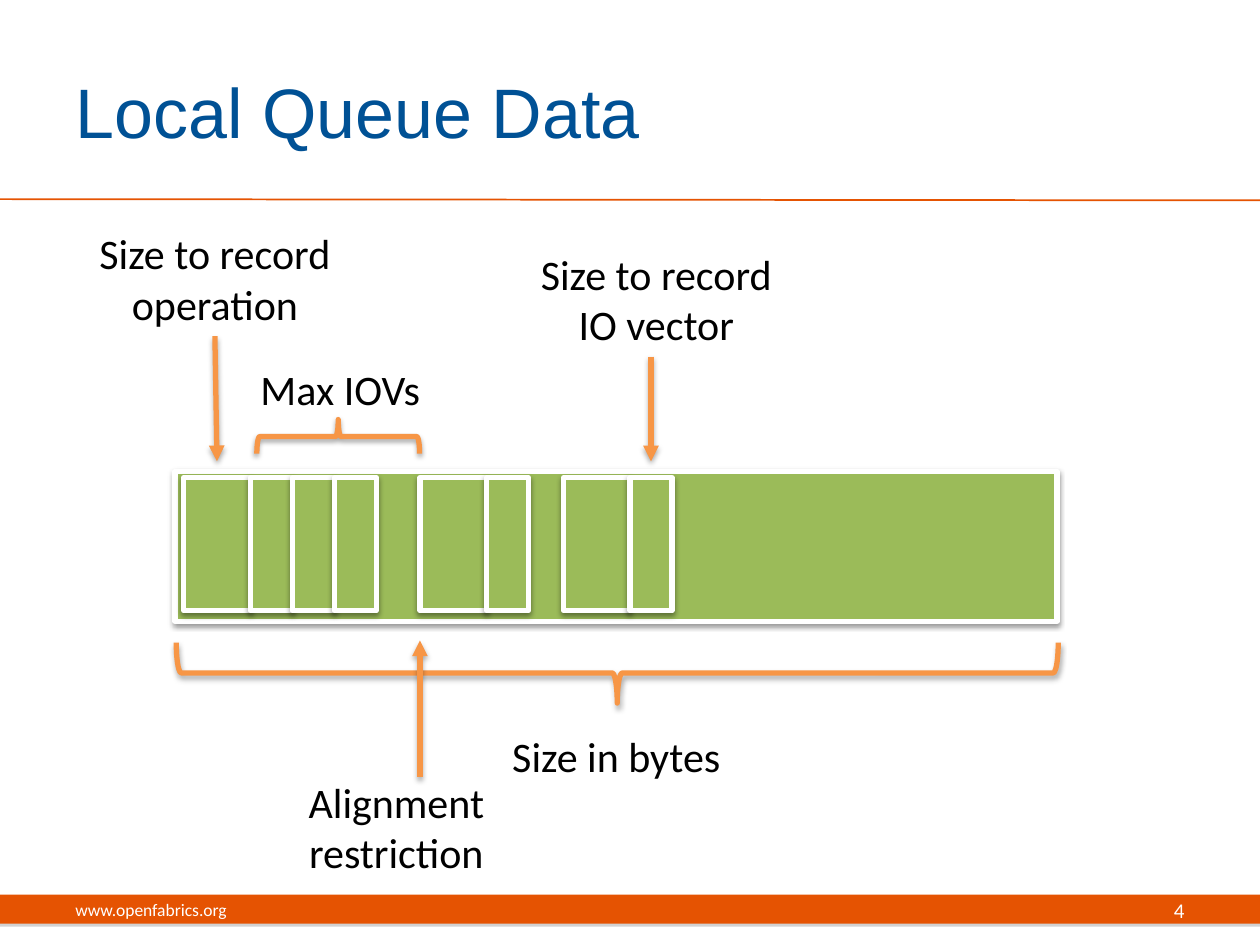
from dataclasses import dataclass

from lxml import etree
from pptx import Presentation
from pptx.enum import shapes, text
from pptx.dml.color import RGBColor
from pptx.oxml import ns
from pptx.util import Pt

COLORS = {
    "title": "005195", "band": "E55302", "green": "9BBB59", "accent": "F79646",
    "white": "FFFFFF", "black": "000000", "gray": "808080",
}
SLOT_TOP, SLOT_HEIGHT = 273, 76
OPERATION_WIDTH, VECTOR_WIDTH = 38, 24


@dataclass
class Box:
    left: float
    top: float
    width: float
    height: float

    def lengths(self) -> list:
        return [Pt(value) for value in (self.left, self.top, self.width, self.height)]


@dataclass
class Label:
    wording: str
    box: Box


@dataclass
class Entry:
    """One queued operation followed by its IO vectors."""
    left: float
    vectors: int


@dataclass
class Arrow:
    start: tuple[float, float]
    end: tuple[float, float]


BAR = Box(100, 269.3, 504, 85.7)
ENTRIES = [Entry(105, 3), Entry(240, 1), Entry(322, 1)]
BRACES = [(Box(335.5, 132.5, 34.5, 504), 270), (Box(183.5, 203, 19.5, 93), 90)]
OPERATION_LABEL = Label("Size to record operation", Box(41.8, 126.7, 162, 65.4))
LABELS = [
    Label("Size in bytes", Box(246, 414, 212.4, 36)),
    Label("Size to record IO vector", Box(294, 138.4, 162, 65.4)),
    Label("Max IOVs", Box(138, 204, 113, 36)),
    Label("Alignment restriction", Box(166, 440, 121, 65.4)),
]
OPERATION_ARROW = Arrow((122.8, 192.1), (124, 263.6))
ARROWS = [Arrow((372, 203.8), (372, 263.6)), Arrow((240, 444), (240, 366))]


def color(name: str) -> RGBColor:
    return RGBColor.from_string(COLORS[name])


def add_effects(shape, shadow_color: str = "", alpha: int = 35,
                blur: float = 3.1, distance: float = 1.8) -> None:
    """Set a downward shadow, or no effect at all when no colour is given."""
    effects = etree.SubElement(shape._element.spPr, ns.qn("a:effectLst"))
    if not shadow_color:
        return
    shadow = etree.SubElement(
        effects, ns.qn("a:outerShdw"), blurRad=str(Pt(blur)),
        dist=str(Pt(distance)), dir="5400000", rotWithShape="0")
    tint = etree.SubElement(shadow, ns.qn("a:srgbClr"), val=COLORS[shadow_color])
    etree.SubElement(tint, ns.qn("a:alpha"), val=str(alpha * 1000))


def style_line(shape, name: str, width: float) -> None:
    shape.line.color.rgb = color(name)
    shape.line.width = Pt(width)


def style_paragraph(paragraph, name: str, size: float, font: str, alignment) -> None:
    paragraph.alignment = alignment
    paragraph.font.name = font
    paragraph.font.size = Pt(size)
    paragraph.font.color.rgb = color(name)


def add_band(slide) -> None:
    band = slide.shapes.add_shape(
        shapes.MSO_SHAPE.RECTANGLE, *Box(0, 511.2, 720, 16.6).lengths())
    band.fill.solid()
    band.fill.fore_color.rgb = color("band")
    band.line.fill.background()
    add_effects(band, "gray", blur=0)


def add_footer(slide, wording: str, box: Box, size: float, alignment) -> None:
    footer = slide.shapes.add_textbox(*box.lengths())
    frame = footer.text_frame
    frame.word_wrap = True
    frame.vertical_anchor = text.MSO_ANCHOR.MIDDLE
    frame.text = wording
    style_paragraph(frame.paragraphs[0], "white", size, "Calibri", alignment)


def add_block(slide, box: Box) -> None:
    block = slide.shapes.add_shape(shapes.MSO_SHAPE.RECTANGLE, *box.lengths())
    block.fill.solid()
    block.fill.fore_color.rgb = color("green")
    style_line(block, "white", 3)
    add_effects(block, "black", alpha=38, distance=1.6)


def add_entry(slide, entry: Entry) -> None:
    left = entry.left
    for width in [OPERATION_WIDTH] + [VECTOR_WIDTH] * entry.vectors:
        add_block(slide, Box(left, SLOT_TOP, width, SLOT_HEIGHT))
        left += width


def add_brace(slide, box: Box, rotation: float) -> None:
    brace = slide.shapes.add_shape(shapes.MSO_SHAPE.LEFT_BRACE, *box.lengths())
    brace.rotation = rotation
    brace.fill.background()
    style_line(brace, "accent", 3)
    add_effects(brace, "black")


def add_label(slide, label: Label):
    shape = slide.shapes.add_shape(shapes.MSO_SHAPE.RECTANGLE, *label.box.lengths())
    shape.shadow.inherit = False
    shape.fill.solid()
    shape.fill.fore_color.rgb = color("white")
    shape.line.fill.background()
    frame = shape.text_frame
    frame.word_wrap = True
    frame.auto_size = text.MSO_AUTO_SIZE.SHAPE_TO_FIT_TEXT
    frame.vertical_anchor = text.MSO_ANCHOR.TOP
    frame.text = label.wording
    style_paragraph(frame.paragraphs[0], "black", 24, "Calibri", text.PP_ALIGN.CENTER)
    return shape


def add_connector(slide, arrow: Arrow, name: str, width: float):
    connector = slide.shapes.add_connector(
        shapes.MSO_CONNECTOR.STRAIGHT,
        *[Pt(value) for value in arrow.start + arrow.end])
    style_line(connector, name, width)
    return connector


def add_arrow(slide, arrow: Arrow):
    connector = add_connector(slide, arrow, "accent", 3)
    etree.SubElement(connector.line._get_or_add_ln(), ns.qn("a:tailEnd"), type="triangle")
    add_effects(connector, "black")
    return connector


def add_title(slide, wording: str) -> None:
    title = slide.shapes.title
    title.left, title.top, title.width, title.height = Box(36, 18, 588, 90).lengths()
    frame = title.text_frame
    frame.text = wording
    frame.vertical_anchor = text.MSO_ANCHOR.MIDDLE
    style_paragraph(frame.paragraphs[0], "title", 40, "Arial", text.PP_ALIGN.LEFT)


def main() -> None:
    presentation = Presentation()
    presentation.slide_width, presentation.slide_height = Pt(720), Pt(540)
    slide = presentation.slides.add_slide(presentation.slide_layouts[5])

    add_title(slide, "Local Queue Data")
    add_band(slide)
    add_effects(add_connector(slide, Arrow((0, 113.8), (720, 114.5)), "band", 1))
    add_footer(slide, "www.openfabrics.org", Box(36, 505.5, 228, 28.8), 10,
               text.PP_ALIGN.LEFT)
    add_footer(slide, "4", Box(516, 505.5, 168, 28.8), 12, text.PP_ALIGN.RIGHT)

    add_block(slide, BAR)
    for entry in ENTRIES:
        add_entry(slide, entry)
    for label in LABELS:
        add_label(slide, label)
    for box, rotation in BRACES:
        add_brace(slide, box, rotation)
    for arrow in ARROWS:
        add_arrow(slide, arrow)
    operation_label = add_label(slide, OPERATION_LABEL)
    add_arrow(slide, OPERATION_ARROW).begin_connect(operation_label, 2)

    presentation.save("out.pptx")


if __name__ == "__main__":
    main()
